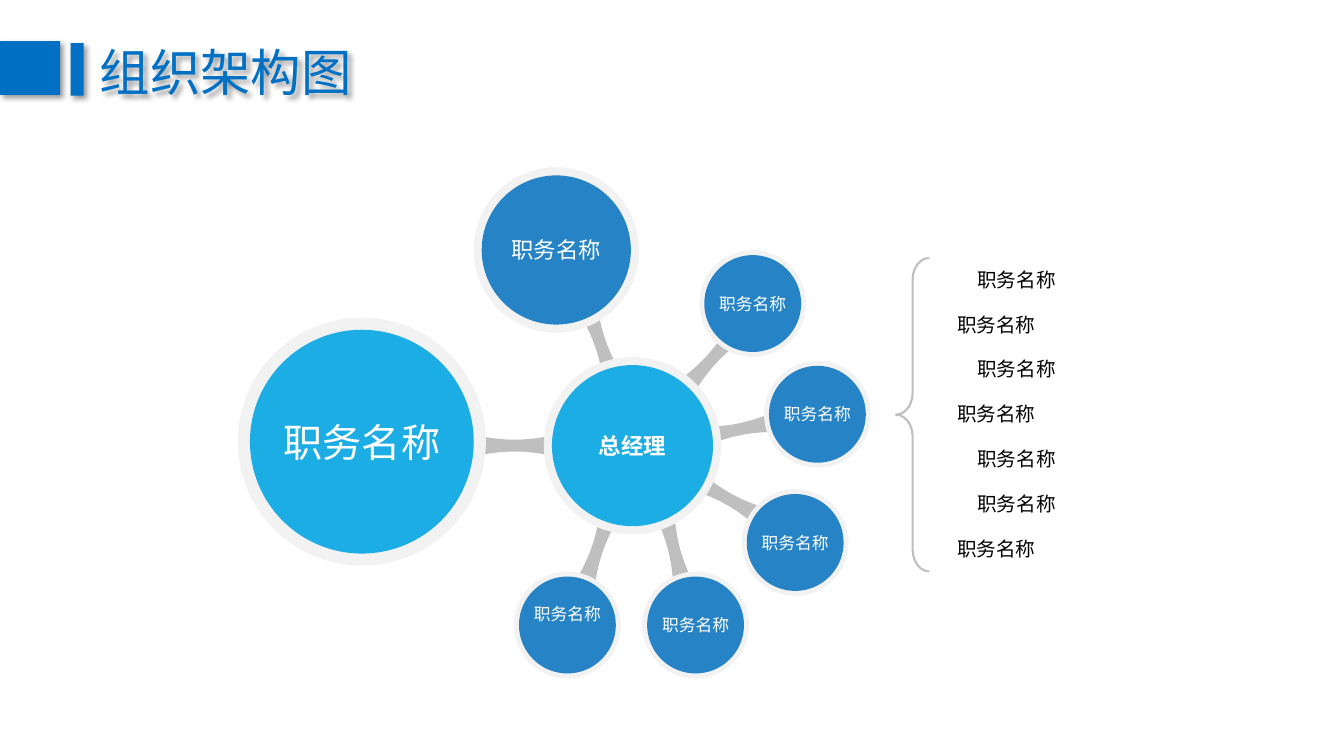
from lxml import etree
from pptx import Presentation
from pptx.dml.color import RGBColor
from pptx.enum.shapes import MSO_SHAPE
from pptx.enum.text import MSO_ANCHOR, PP_ALIGN
from pptx.oxml.ns import qn
from pptx.util import Cm, Pt

RECTANGLE, OVAL, BRACE = MSO_SHAPE.RECTANGLE, MSO_SHAPE.OVAL, MSO_SHAPE.LEFT_BRACE
LEFT, CENTER, MIDDLE = PP_ALIGN.LEFT, PP_ALIGN.CENTER, MSO_ANCHOR.MIDDLE

# Content (lengths in cm)
TITLE = "组织架构图"
ROLE = "职务名称"
FONT = "Noto Sans CJK SC"
BLUE, SKY, MID = "0070C4", "1CADE4", "2683C6"
GREY, PALE, WHITE, BLACK = "BFBFBF", "F2F2F2", "FFFFFF", "000000"

TITLE_BARS = [(0, 1.04, 1.52, 1.35), (1.78, 1.09, 0.33, 1.32)]
SMALL = dict(ring=2.69, disc=2.44, color=MID, size=12)
# text, centre, label shift, style
NODES = [
    (ROLE, (18.97, 7.65), 0, SMALL),
    (ROLE, (20.6, 10.44), 0, SMALL),
    (ROLE, (20.04, 13.67), 0, SMALL),
    (ROLE, (17.53, 15.75), 0, SMALL),
    (ROLE, (14.3, 15.75), -0.28, SMALL),
    (ROLE, (9.12, 11.13), 0, dict(ring=6.25, disc=5.64, color=SKY, size=28)),
    ("总经理", (15.94, 11.23), 0,
     dict(ring=4.47, disc=4.06, color=SKY, size=16, name="Calibri", bold=True)),
    (ROLE, (14.02, 6.3), 0, dict(ring=4.17, disc=3.76, color=MID, size=16)),
]
# centre x, centre y, rotation
SPOKES = [
    (15.05, 13.84, 109.3), (16.98, 13.82, 75.5), (18.35, 12.57, 29.1),
    (18.63, 10.82, 348.6), (17.92, 9.07, 312.4), (15.13, 8.66, 70.3),
    (12.97, 11.23, 0),
]
SPOKE_LENGTH, SPOKE_END, SPOKE_WAIST, SPOKE_STEPS = 2.06, 0.56, 0.3, 12
BRACE_BOX = (22.58, 6.5, 0.84, 7.9)
LIST_TOP, LIST_PITCH, LIST_X, LIST_INDENT = 7.04, 1.13, 25.11, 0.51
LIST = [(ROLE, level) for level in (1, 0, 1, 0, 1, 1, 0)]


def rgb(value):
    return RGBColor.from_string(value)


def paint(shape, fill=None, line=None):
    shape.shadow.inherit = False
    if fill:
        shape.fill.solid()
        shape.fill.fore_color.rgb = rgb(fill)
    else:
        shape.fill.background()
    if line:
        shape.line.color.rgb = rgb(line)
        shape.line.width = Pt(1.5)
    else:
        shape.line.fill.background()


def add_shadow(shape):
    shape.shadow.inherit = False
    effects = shape._element.spPr.find(qn("a:effectLst"))
    shadow = etree.SubElement(effects, qn("a:outerShdw"), blurRad=str(Pt(4)),
                              dist=str(Pt(3)), dir="2700000", algn="tl", rotWithShape="0")
    color = etree.SubElement(shadow, qn("a:srgbClr"), val=BLACK)
    etree.SubElement(color, qn("a:alpha"), val="40000")


def add_shape(kind, box, **look):
    shape = page.shapes.add_shape(kind, *map(Cm, box))
    paint(shape, **look)
    return shape


def add_circle(center, diameter, color):
    left, top = (value - diameter / 2 for value in center)
    add_shape(OVAL, (left, top, diameter, diameter), fill=color)


def add_spoke(x, y, rotation):
    steps = [2 * i / SPOKE_STEPS - 1 for i in range(SPOKE_STEPS + 1)]
    upper = []
    for step in steps:
        half = (SPOKE_WAIST + (SPOKE_END - SPOKE_WAIST) * step ** 2) / 2
        upper.append((step * SPOKE_LENGTH / 2, -half))
    lower = [(dx, -dy) for dx, dy in reversed(upper)]
    points = [(Cm(x + dx), Cm(y + dy)) for dx, dy in upper + lower]
    outline = page.shapes.build_freeform(*points[0])
    outline.add_line_segments(points[1:])
    spoke = outline.convert_to_shape()
    spoke.rotation = rotation
    paint(spoke, fill=GREY)


def write(box, text, align, color, size, name=FONT, bold=False):
    frame = box.text_frame
    frame.word_wrap = False
    frame.vertical_anchor = MIDDLE
    para = frame.paragraphs[0]
    para.alignment = align
    span = para.add_run()
    span.text = text
    for key, value in dict(size=Pt(size), name=name, bold=bold).items():
        setattr(span.font, key, value)
    span.font.color.rgb = rgb(color)
    etree.SubElement(span._r.get_or_add_rPr(), qn("a:ea"), typeface=FONT)


def add_label(text, center, color, size, **font):
    em = size * 2.54 / 72
    width, height = len(text) * em + 0.51, 1.2 * em + 0.25
    x, y = center
    box = page.shapes.add_textbox(*map(Cm, (x - width / 2, y - height / 2, width, height)))
    write(box, text, CENTER, color, size, **font)


deck = Presentation()
deck.slide_width, deck.slide_height = Cm(33.87), Cm(19.05)
page = deck.slides.add_slide(deck.slide_layouts[5])

# Title and its bars
title = page.shapes.title
title.left, title.top, title.width, title.height = map(Cm, (2.26, 0.91, 6.93, 1.8))
write(title, TITLE, LEFT, BLUE, 36)
add_shadow(title)
for bar in TITLE_BARS:
    add_shadow(add_shape(RECTANGLE, bar, fill=BLUE))

# Spokes, then the circles over their ends
for spoke in SPOKES:
    add_spoke(*spoke)
for text, center, shift, style in NODES:
    add_circle(center, style["ring"], PALE)
    add_circle(center, style["disc"], style["color"])
    font = {key: style[key] for key in ("size", "name", "bold") if key in style}
    add_label(text, (center[0], center[1] + shift), WHITE, **font)

# Brace and the list beside it
brace = add_shape(BRACE, BRACE_BOX, line=GREY)
brace.adjustments[0] = 0.65
for row, (text, level) in enumerate(LIST):
    center = (LIST_X + level * LIST_INDENT, LIST_TOP + row * LIST_PITCH)
    add_label(text, center, BLACK, 14)

deck.save("out.pptx")
